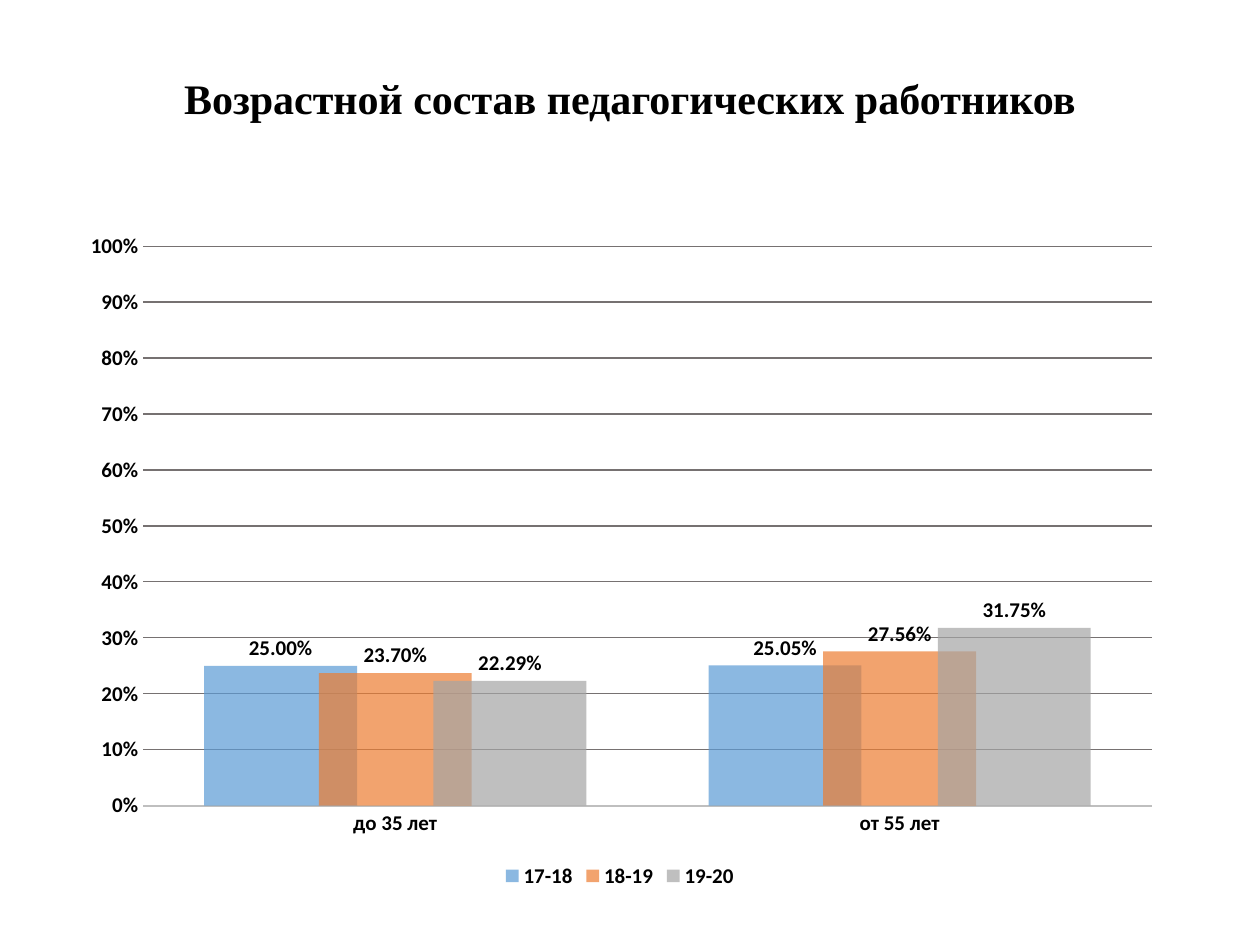
import pptx
import pptx.chart.data
import pptx.dml.color
import pptx.enum.chart
import pptx.enum.text
import pptx.oxml
import pptx.oxml.ns
import pptx.util
from pptx.util import Cm

SERIES = [
    ("17-18", (0.25, 0.2505), "5B9BD5"),
    ("18-19", (0.237, 0.2756), "ED7D31"),
    ("19-20", (0.2229, 0.3175), "A5A5A5"),
]


def colour(hex_text):
    return pptx.dml.color.RGBColor.from_string(hex_text)


def set_opacity(fill_parent, percent):
    """Make the solid fill inside an element partly transparent."""
    for tint in fill_parent.iter(pptx.oxml.ns.qn("a:srgbClr")):
        alpha = pptx.oxml.parse_xml(
            f'<a:alpha {pptx.oxml.ns.nsdecls("a")} val="{percent * 1000}"/>')
        tint.append(alpha)


def place_plot(chart, **fractions):
    """Fix the inner plot area as fractions of the chart frame."""
    plot_area = chart.plots[0]._element.getparent()
    for old in plot_area.findall(pptx.oxml.ns.qn("c:layout")):
        plot_area.remove(old)
    sizes = "".join(f'<c:{key} val="{value}"/>' for key, value in fractions.items())
    plot_area.insert(0, pptx.oxml.parse_xml(
        f'<c:layout {pptx.oxml.ns.nsdecls("c")}><c:manualLayout>'
        '<c:layoutTarget val="inner"/><c:xMode val="edge"/><c:yMode val="edge"/>'
        f'{sizes}</c:manualLayout></c:layout>'))


class SlideBuilder:
    ink = "000000"
    title_font = "Times New Roman"
    chart_font = "Calibri"

    def __init__(self, page):
        self.page = page

    def style(self, font, name, size):
        font.name = name
        font.size = pptx.util.Pt(size)
        font.bold = True
        font.color.rgb = colour(self.ink)

    def title(self, text, left, top, width, height):
        box = self.page.shapes.add_textbox(Cm(left), Cm(top), Cm(width), Cm(height))
        frame = box.text_frame
        frame.word_wrap = True
        frame.vertical_anchor = pptx.enum.text.MSO_ANCHOR.MIDDLE
        para = frame.paragraphs[0]
        para.alignment = pptx.enum.text.PP_ALIGN.CENTER
        para.line_spacing = 0.9
        span = para.add_run()
        span.text = text
        self.style(span.font, self.title_font, 24)

    def column_chart(self, categories, series_rows, left, top, width, height):
        data = pptx.chart.data.CategoryChartData(number_format="0.00%")
        data.categories = categories
        for name, values, _ in series_rows:
            data.add_series(name, values)
        chart = self.page.shapes.add_chart(
            pptx.enum.chart.XL_CHART_TYPE.COLUMN_CLUSTERED,
            Cm(left), Cm(top), Cm(width), Cm(height), data).chart
        chart.has_title = False
        self.style(chart.font, self.chart_font, 12)
        chart.has_legend = True
        chart.legend.position = pptx.enum.chart.XL_LEGEND_POSITION.BOTTOM
        chart.legend.include_in_layout = False
        self.style(chart.legend.font, self.chart_font, 12)
        self.axes(chart)
        self.columns(chart.plots[0], series_rows)
        place_plot(chart, x=0.07, y=0.04, w=0.91, h=0.83)

    def axes(self, chart):
        for axis in (chart.category_axis, chart.value_axis):
            axis.major_tick_mark = pptx.enum.chart.XL_TICK_MARK.NONE
            axis.minor_tick_mark = pptx.enum.chart.XL_TICK_MARK.NONE
            self.style(axis.tick_labels.font, self.chart_font, 12)
        base = chart.category_axis.format.line
        base.color.rgb = colour("BFBFBF")
        base.width = pptx.util.Pt(1.25)
        scale = chart.value_axis
        scale.minimum_scale, scale.maximum_scale, scale.major_unit = 0, 1, 0.1
        scale.tick_labels.number_format = "0%"
        scale.tick_labels.number_format_is_linked = False
        scale.format.line.fill.background()
        grid = scale.major_gridlines.format.line
        grid.color.rgb = colour("767171")
        grid.width = pptx.util.Pt(0.75)

    def columns(self, plot, series_rows):
        plot.gap_width = 80
        plot.overlap = 25
        plot.vary_by_categories = False
        for series, (_, _, tint) in zip(plot.series, series_rows):
            series.format.fill.solid()
            series.format.fill.fore_color.rgb = colour(tint)
            set_opacity(series._element.spPr, 70)
            labels = series.data_labels
            labels.show_value = True
            labels.number_format = "0.00%"
            labels.number_format_is_linked = False
            labels.position = pptx.enum.chart.XL_LABEL_POSITION.OUTSIDE_END
            self.style(labels.font, self.chart_font, 12)


def main():
    deck = pptx.Presentation()
    deck.slide_width, deck.slide_height = Cm(25.4), Cm(19.05)
    builder = SlideBuilder(deck.slides.add_slide(deck.slide_layouts[6]))
    builder.title("Возрастной состав педагогических работников", 1.75, 1.02, 21.9, 2.03)
    builder.column_chart(["до 35 лет", "от 55 лет"], SERIES, 1.32, 4.42, 22.35, 13.59)
    deck.save("out.pptx")


if __name__ == "__main__":
    main()
